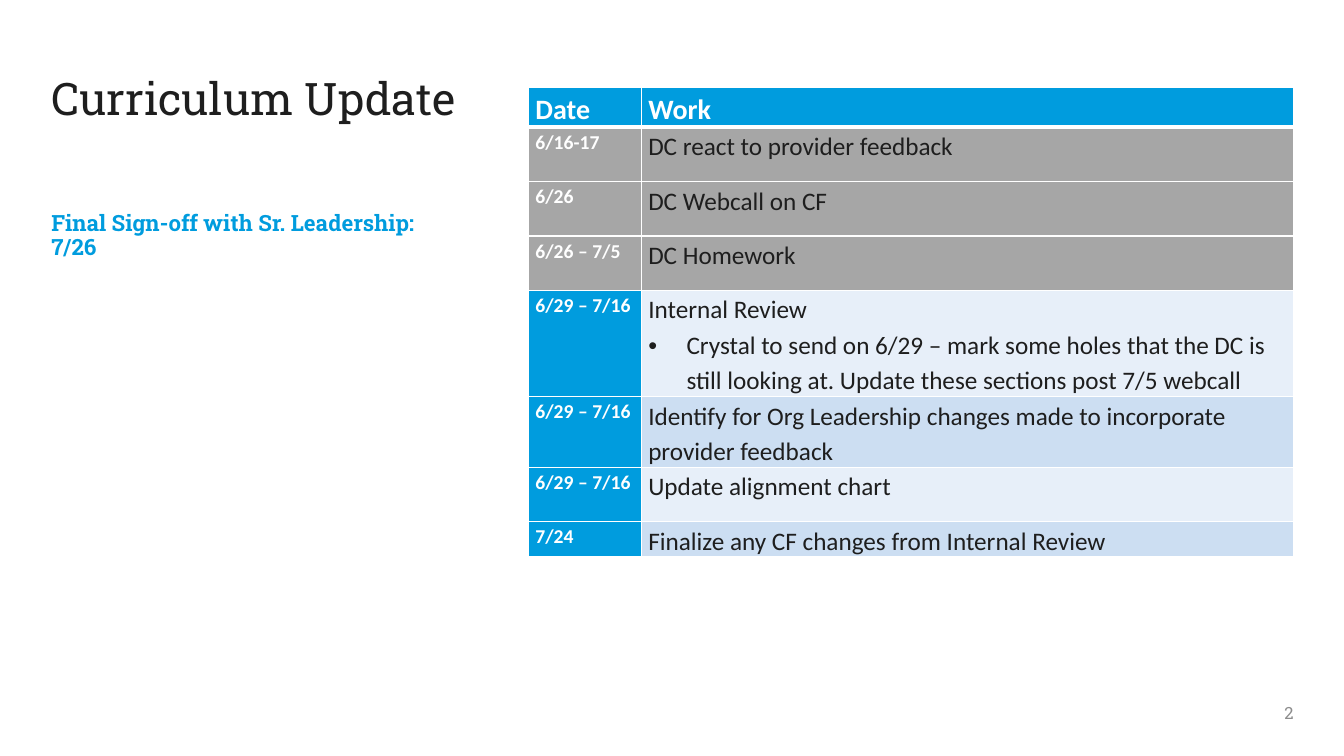
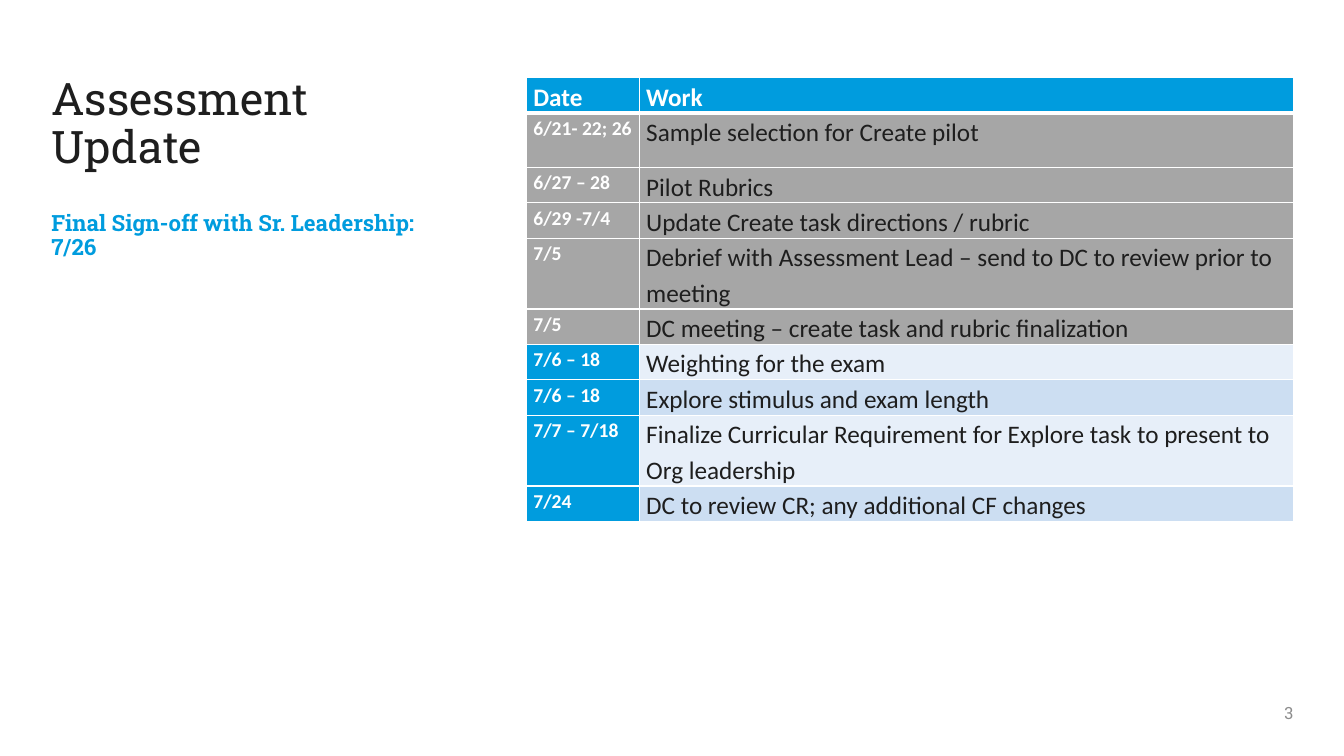
from lxml import etree
from pptx import Presentation
from pptx.dml.color import RGBColor
from pptx.enum.text import MSO_ANCHOR, MSO_AUTO_SIZE, PP_ALIGN
from pptx.oxml.ns import qn
from pptx.util import Inches, Pt

TOP, BOTTOM = MSO_ANCHOR.TOP, MSO_ANCHOR.BOTTOM
LEFT, RIGHT = PP_ALIGN.LEFT, PP_ALIGN.RIGHT
NO_AUTOFIT = MSO_AUTO_SIZE.NONE

BLUE = RGBColor(0x00, 0x9C, 0xDE)
DONE_GRAY = RGBColor(0xA6, 0xA6, 0xA6)
BAND_LIGHT = RGBColor(0xE7, 0xEF, 0xF9)
BAND_DARK = RGBColor(0xCC, 0xDE, 0xF2)
INK = RGBColor(0x1E, 0x1E, 0x1E)
NUMBER_GRAY = RGBColor(0x8D, 0x8D, 0x8D)
WHITE = RGBColor(0xFF, 0xFF, 0xFF)

SLAB = "Roboto Slab"
SANS = "Calibri"
LEFT_COLUMN = 0.51
LEFT_WIDTH = 4.09
DATE_WIDTH = 1.12
TABLE_RIGHT = 12.83
SIGN_OFF = "Final Sign-off with Sr. Leadership: 7/26"

# Each schedule row: date, lines of work (lines after the first are bullets), height
CURRICULUM_ROWS = [
    ("6/16-17", ["DC react to provider feedback"], 0.54),
    ("6/26", ["DC Webcall on CF"], 0.54),
    ("6/26 – 7/5", ["DC Homework"], 0.54),
    ("6/29 – 7/16", ["Internal Review",
                     "Crystal to send on 6/29 – mark some holes that the DC is still "
                     "looking at. Update these sections post 7/5 webcall"], 0.81),
    ("6/29 – 7/16", ["Identify for Org Leadership changes made to incorporate "
                     "provider feedback"], 0.54),
    ("6/29 – 7/16", ["Update alignment chart"], 0.54),
    ("7/24", ["Finalize any CF changes from Internal Review"], 0.26),
]
ASSESSMENT_ROWS = [
    ("6/21- 22; 26", ["Sample selection for Create pilot"], 0.54),
    ("6/27 – 28", ["Pilot Rubrics"], 0.34),
    ("6/29 -7/4", ["Update Create task directions / rubric"], 0.34),
    ("7/5", ["Debrief with Assessment Lead – send to DC to review prior to "
             "meeting"], 0.7),
    ("7/5", ["DC meeting – create task and rubric finalization"], 0.34),
    ("7/6 – 18", ["Weighting for the exam"], 0.34),
    ("7/6 – 18", ["Explore stimulus and exam length"], 0.34),
    ("7/7 – 7/18", ["Finalize Curricular Requirement for Explore task to present "
                    "to Org leadership"], 0.7),
    ("7/24", ["DC to review CR; any additional CF changes"], 0.34),
]


def set_bullet(paragraph, character=None, indent=0):
    """Give the paragraph a hanging bullet, or none at all."""
    properties = paragraph._p.get_or_add_pPr()
    properties.set("marL", str(Inches(indent)))
    properties.set("indent", str(-Inches(indent)))
    if character:
        etree.SubElement(properties, qn("a:buFont"), typeface="Arial")
        etree.SubElement(properties, qn("a:buChar"), char=character)
    else:
        etree.SubElement(properties, qn("a:buNone"))


def write(paragraph, text, *, size, font=SANS, color=INK, bold=False,
          align=LEFT, spacing=1.0):
    paragraph.alignment = align
    paragraph.line_spacing = spacing
    paragraph.space_before = Pt(0)
    run = paragraph.add_run()
    run.text = text
    run.font.name = font
    run.font.size = Pt(size)
    run.font.bold = bold
    run.font.color.rgb = color


def place_text(shape, box, text, *, inset_top=0, anchor=TOP, **text_format):
    """Move a shape to box (left, top, width, height) and fill in its text."""
    shape.left, shape.top, shape.width, shape.height = map(Inches, box)
    frame = shape.text_frame
    frame.word_wrap = True
    frame.auto_size = NO_AUTOFIT
    frame.vertical_anchor = anchor
    frame.margin_left = frame.margin_right = frame.margin_bottom = 0
    frame.margin_top = Inches(inset_top)
    set_bullet(frame.paragraphs[0])
    write(frame.paragraphs[0], text, **text_format)


def set_borders(cell, top=1, bottom=1):
    properties = cell._tc.get_or_add_tcPr()
    widths = {"a:lnL": 1, "a:lnR": 1, "a:lnT": top, "a:lnB": bottom}
    for position, (tag, width) in enumerate(widths.items()):
        line = etree.Element(qn(tag), w=str(Pt(width)))
        fill = etree.SubElement(line, qn("a:solidFill"))
        etree.SubElement(fill, qn("a:srgbClr"), val=str(WHITE))
        properties.insert(position, line)


def fill_cell(cell, lines, fill, *, top=1, bottom=1, **text_format):
    cell.margin_left = cell.margin_right = Inches(0.07)
    cell.margin_top = cell.margin_bottom = 0
    cell.vertical_anchor = TOP
    cell.fill.solid()
    cell.fill.fore_color.rgb = fill
    set_borders(cell, top, bottom)
    frame = cell.text_frame
    for index, line in enumerate(lines):
        paragraph = frame.add_paragraph() if index else frame.paragraphs[0]
        if index:
            set_bullet(paragraph, "•", 0.38)
        write(paragraph, line, spacing=1.15, **text_format)


def add_schedule(slide, left, top, rows, done, header_size, header_height):
    """Draw the date and work table; the first `done` rows are grayed out."""
    heights = [header_height] + [height for _, _, height in rows]
    width = TABLE_RIGHT - left
    table = slide.shapes.add_table(
        len(heights), 2, Inches(left), Inches(top),
        Inches(width), Inches(sum(heights))).table
    table.columns[0].width = Inches(DATE_WIDTH)
    table.columns[1].width = Inches(width - DATE_WIDTH)
    for row, height in zip(table.rows, heights):
        row.height = Inches(height)

    for column, heading in enumerate(("Date", "Work")):
        fill_cell(table.cell(0, column), [heading], BLUE, bottom=3,
                  size=header_size, color=WHITE, bold=True)
    for number, (date, work, _) in enumerate(rows, start=1):
        band = BAND_DARK if number % 2 else BAND_LIGHT
        if len(rows) % 2 == 0:
            band = BAND_LIGHT if number % 2 else BAND_DARK
        date_fill, work_fill = (DONE_GRAY,) * 2 if number <= done else (BLUE, band)
        top_border = 3 if number == 1 else 1
        fill_cell(table.cell(number, 0), [date], date_fill, top=top_border,
                  size=14, color=WHITE, bold=True)
        fill_cell(table.cell(number, 1), work, work_fill, top=top_border, size=18)


def add_update_slide(presentation, title, number, title_height, number_font, **schedule):
    slide = presentation.slides.add_slide(presentation.slide_layouts[1])
    place_text(slide.shapes.title, (LEFT_COLUMN, 0.61, LEFT_WIDTH, title_height),
               title, inset_top=0.15, size=32, font=SLAB, spacing=0.9)
    place_text(slide.placeholders[1], (LEFT_COLUMN, 1.85, LEFT_WIDTH, 0.74),
               SIGN_OFF, inset_top=0.25, size=16, font=SLAB, color=BLUE,
               bold=True, spacing=0.9)
    add_schedule(slide, **schedule)
    place_text(slide.shapes.add_textbox(0, 0, 0, 0), (TABLE_RIGHT - 3, 6.77, 3, 0.4),
               str(number), anchor=BOTTOM, size=12, font=number_font,
               color=NUMBER_GRAY, align=RIGHT)


def main():
    presentation = Presentation()
    presentation.slide_width = Inches(13.33)
    presentation.slide_height = Inches(7.5)
    add_update_slide(presentation, "Curriculum Update", 2, 0.64, SLAB,
                     left=5.24, top=0.87, rows=CURRICULUM_ROWS, done=3,
                     header_size=20, header_height=0.29)
    add_update_slide(presentation, "Assessment Update", 3, 1.12, SLAB,
                     left=5.22, top=0.77, rows=ASSESSMENT_ROWS, done=5,
                     header_size=18, header_height=0.34)
    presentation.save("out.pptx")


if __name__ == "__main__":
    main()
